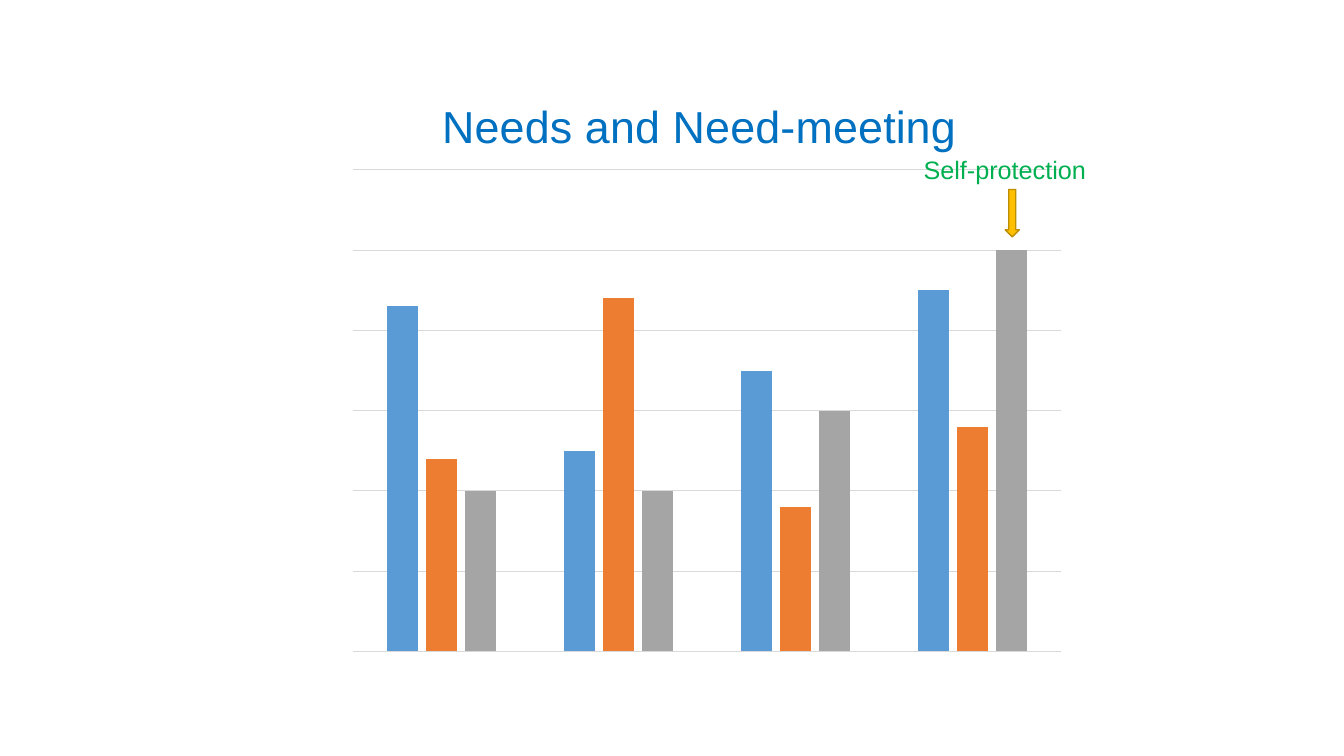
from lxml.etree import SubElement
from pptx import Presentation
from pptx.chart.data import CategoryChartData
from pptx.dml.color import RGBColor
from pptx.enum.chart import XL_CHART_TYPE
from pptx.enum.shapes import MSO_SHAPE
from pptx.enum.text import MSO_AUTO_SIZE, PP_ALIGN
from pptx.oxml.ns import qn
from pptx.util import Inches, Pt


def rgb(hex_color):
    return RGBColor.from_string(hex_color)


def place(parent, **values):
    """Give a chart title or plot area a manual position."""
    layout = parent.find(qn("c:layout"))
    if layout is None:
        layout = SubElement(parent, qn("c:layout"))
        parent.insert(0, layout)
    for child in list(layout):
        layout.remove(child)
    manual = SubElement(layout, qn("c:manualLayout"))
    for tag, value in values.items():
        SubElement(manual, qn(f"c:{tag}")).set("val", str(value))


class SlideBuilder:
    font = "Arial"
    title_color = "0070C0"
    label_color = "00B050"
    grid_color = "D9D9D9"

    def __init__(self, prs):
        self.s = prs.slides.add_slide(prs.slide_layouts[6])

    def run(self, p, text, size, color):
        r = p.add_run()
        r.text = text
        r.font.name = self.font
        r.font.size = Pt(size)
        r.font.bold = False
        r.font.color.rgb = rgb(color)

    def columns(self, box, title, categories, series):
        data = CategoryChartData()
        data.categories = categories
        for name, values, _ in series:
            data.add_series(name, values)
        chart = self.s.shapes.add_chart(
            XL_CHART_TYPE.COLUMN_CLUSTERED, *map(Inches, box), data).chart
        chart.has_legend = False
        chart.font.name = self.font
        chart.font.size = Pt(10)
        chart.font.color.rgb = rgb("000000")

        # Title and plot position
        self.run(chart.chart_title.text_frame.paragraphs[0], title, 32, self.title_color)
        chart_el = chart.element.find(qn("c:chart"))
        place(chart_el.find(qn("c:title")),
              xMode="edge", yMode="edge", x=0.146, y=0.014)
        place(chart_el.find(qn("c:plotArea")),
              layoutTarget="inner", xMode="edge", yMode="edge",
              x=0.038, y=0.139, w=0.945, h=0.742)

        # Hidden axes, visible gridlines
        chart.category_axis.visible = False
        axis = chart.value_axis
        axis.visible = False
        axis.minimum_scale, axis.maximum_scale, axis.major_unit = 0, 120, 20
        axis.has_major_gridlines = True
        grid = axis.major_gridlines.format.line
        grid.color.rgb = rgb(self.grid_color)
        grid.width = Pt(0.75)

        # Columns
        plot = chart.plots[0]
        plot.gap_width, plot.overlap = 219, -27
        plot.vary_by_categories = False
        for column, (_, _, color) in zip(plot.series, series):
            column.format.fill.solid()
            column.format.fill.fore_color.rgb = rgb(color)

    def label(self, box, text):
        tf = self.s.shapes.add_textbox(*map(Inches, box)).text_frame
        tf.word_wrap = True
        tf.auto_size = MSO_AUTO_SIZE.SHAPE_TO_FIT_TEXT
        p = tf.paragraphs[0]
        p.alignment = PP_ALIGN.CENTER
        self.run(p, text, 18, self.label_color)

    def down_arrow(self, box, fill, line):
        sp = self.s.shapes.add_shape(MSO_SHAPE.DOWN_ARROW, *map(Inches, box))
        sp.shadow.inherit = False
        sp.fill.solid()
        sp.fill.fore_color.rgb = rgb(fill)
        sp.line.color.rgb = rgb(line)
        sp.line.width = Pt(1)


def main():
    prs = Presentation()
    prs.slide_width, prs.slide_height = Inches(13.33), Inches(7.5)
    slide = SlideBuilder(prs)

    # Needs chart
    slide.columns(
        (3.22, 0.79, 7.43, 6.44), "Needs and Need-meeting", ["1", "2", "3", "4"],
        [("Series 1", (86, 50, 70, 90), "5B9BD5"),
         ("Series 2", (48, 88, 36, 56), "ED7D31"),
         ("Series 3", (40, 40, 60, 100), "A5A5A5")])

    # Callout on the tallest column
    slide.label((8.84, 1.48, 2.25, 0.4), "Self-protection")
    slide.down_arrow((9.97, 1.88, 0.14, 0.47), "FFC000", "BD8E00")

    prs.save("out.pptx")


if __name__ == "__main__":
    main()
